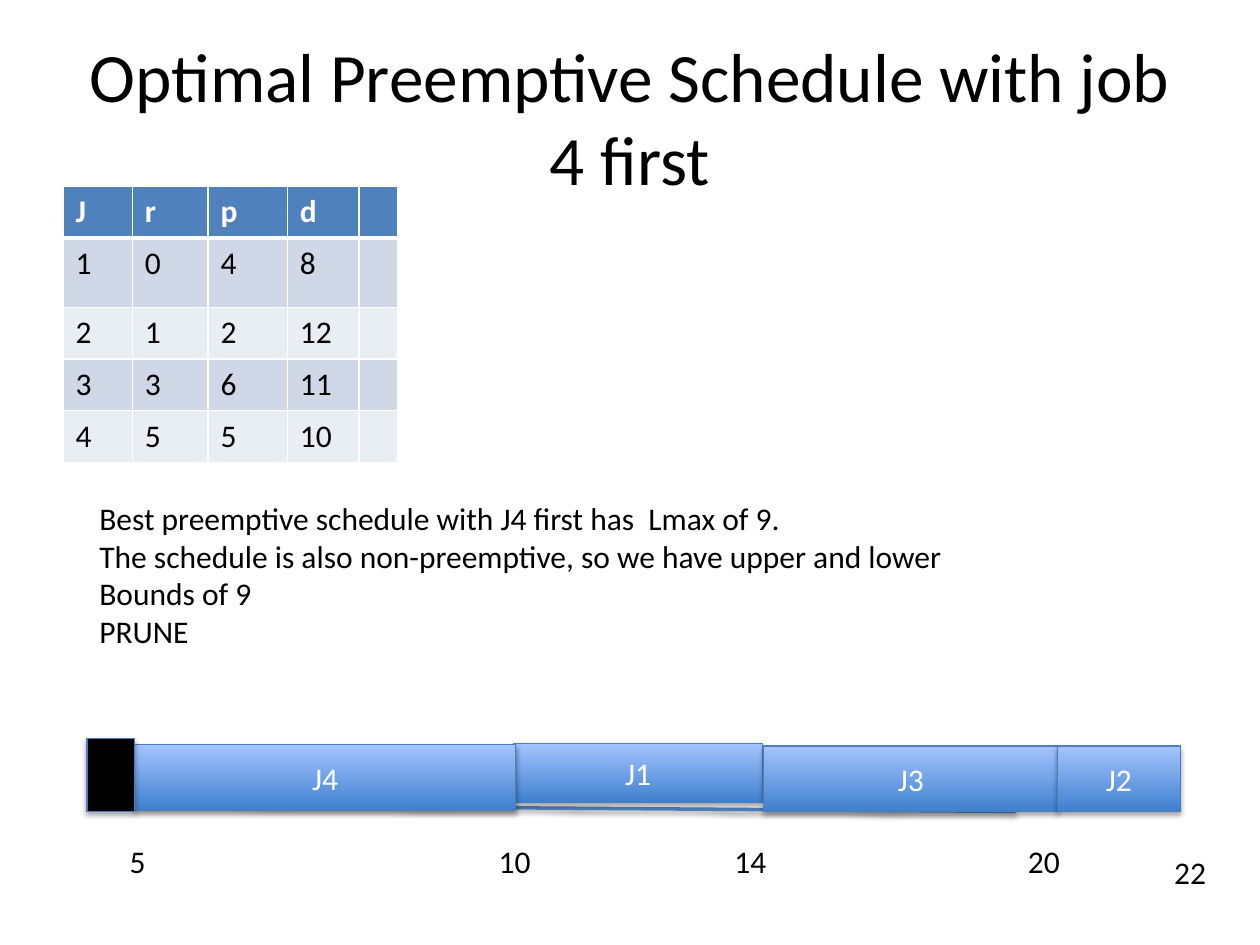
import pptx
import pptx.util
import pptx.dml.color
import pptx.enum.shapes
import pptx.enum.text
import pptx.oxml
import pptx.oxml.ns
from pptx.util import Inches

ALIGN = pptx.enum.text.PP_ALIGN
ANCHOR = pptx.enum.text.MSO_ANCHOR
RECTANGLE = pptx.enum.shapes.MSO_SHAPE.RECTANGLE
DRAWING_NS = pptx.oxml.ns.nsdecls("a")


def color(hex_string):
    return pptx.dml.color.RGBColor.from_string(hex_string)


def add_run(para, text, size=18, hex_string="000000", bold=False):
    span = para.add_run()
    span.text = text
    span.font.name = "Calibri"
    span.font.size = pptx.util.Pt(size)
    span.font.bold = bold
    span.font.color.rgb = color(hex_string)


deck = pptx.Presentation()
deck.slide_width, deck.slide_height = Inches(10), Inches(7.5)
page = deck.slides.add_slide(deck.slide_layouts[5])

# Title
title = page.shapes.title
title.left, title.top = Inches(0.5), Inches(0.3)
title.width, title.height = Inches(9), Inches(1.25)
title.text_frame.auto_size = pptx.enum.text.MSO_AUTO_SIZE.NONE
title.text_frame.vertical_anchor = ANCHOR.MIDDLE
para = title.text_frame.paragraphs[0]
para.alignment = ALIGN.CENTER
add_run(para, "Optimal Preemptive Schedule with job 4 first", 39.6)

# Job table
jobs = [
    ["J", "r", "p", "d", ""],
    ["1", "0", "4", "8", ""],
    ["2", "1", "2", "12", ""],
    ["3", "3", "6", "11", ""],
    ["4", "5", "5", "10", ""],
]
column_widths = [0.55, 0.6, 0.63, 0.57, 0.31]
row_heights = [0.41, 0.55, 0.41, 0.41, 0.41]
table = page.shapes.add_table(
    5, 5, Inches(0.5), Inches(1.48), Inches(sum(column_widths)), Inches(sum(row_heights))
).table
for column, width in zip(table.columns, column_widths):
    column.width = Inches(width)
for row, height in zip(table.rows, row_heights):
    row.height = Inches(height)
for r, values in enumerate(jobs):
    header = r == 0
    for c, value in enumerate(values):
        cell = table.cell(r, c)
        cell.fill.solid()
        cell.fill.fore_color.rgb = color("4F81BD" if header else ["E9EDF4", "D0D8E8"][r % 2])
        if value:
            add_run(cell.text_frame.paragraphs[0], value,
                    hex_string="FFFFFF" if header else "000000", bold=header)
        # White borders, thicker between header and body
        for i, side in enumerate("LRTB"):
            thick = (header and side == "B") or (r == 1 and side == "T")
            border = pptx.oxml.parse_xml(
                f'<a:ln{side} {DRAWING_NS} w="{pptx.util.Pt(3 if thick else 1)}">'
                '<a:solidFill><a:srgbClr val="FFFFFF"/></a:solidFill>'
                f'</a:ln{side}>')
            cell._tc.get_or_add_tcPr().insert(i, border)

# Time axis behind the bars
axis = page.shapes.add_connector(
    pptx.enum.shapes.MSO_CONNECTOR.STRAIGHT,
    Inches(1.06), Inches(6.39), Inches(8.06), Inches(6.44))
axis.line.color.rgb = color("4F81BD")
axis.line.width = pptx.util.Pt(2)
shadowed = [(axis, 1.6, 38)]

# Schedule bars: job, left, top, width, height (no job means idle time)
bars = [
    ("J1", 4.08, 5.9, 1.97, 0.47),
    ("J4", 1.07, 5.91, 3.02, 0.52),
    ("J3", 6.06, 5.92, 2.34, 0.52),
    ("J2", 8.39, 5.92, 0.98, 0.52),
    ("", 0.69, 5.86, 0.38, 0.58),
]
for job, *place in bars:
    bar = page.shapes.add_shape(RECTANGLE, *map(Inches, place))
    bar.line.color.rgb = color("4B7EBC")
    bar.line.width = pptx.util.Pt(0.75)
    if job:
        bar.fill.gradient()
        bar.fill.gradient_angle = 90
        for stop, shade in zip(bar.fill.gradient_stops, ["3F80CE", "A4C4FF"]):
            stop.color.rgb = color(shade)
        bar.text_frame.vertical_anchor = ANCHOR.MIDDLE
        para = bar.text_frame.paragraphs[0]
        para.alignment = ALIGN.CENTER
        add_run(para, job, hex_string="FFFFFF")
    else:
        bar.fill.solid()
        bar.fill.fore_color.rgb = color("000000")
    shadowed.append((bar, 1.8, 35))

# Soft shadows straight below the axis and bars
for item, distance, opacity in shadowed:
    item._element.spPr.append(pptx.oxml.parse_xml(
        f'<a:effectLst {DRAWING_NS}><a:outerShdw blurRad="{pptx.util.Pt(3.1)}" '
        f'dist="{pptx.util.Pt(distance)}" dir="5400000" rotWithShape="0">'
        f'<a:srgbClr val="000000"><a:alpha val="{opacity * 1000}"/></a:srgbClr>'
        '</a:outerShdw></a:effectLst>'))

# Conclusion and time labels: lines, left, top, width, height
conclusion = [
    "Best preemptive schedule with J4 first has  Lmax of 9.",
    "The schedule is also non-preemptive, so we have upper and lower",
    "Bounds of 9",
    "PRUNE",
]
notes = [
    (conclusion, 0.69, 3.91, 6.98, 1.62),
    (["5"], 0.93, 6.63, 0.33, 0.4),
    (["10"], 3.86, 6.63, 0.46, 0.4),
    (["14"], 5.73, 6.63, 0.46, 0.4),
    (["20"], 8.06, 6.63, 0.46, 0.4),
    (["22"], 9.22, 6.72, 0.46, 0.4),
]
for lines, *place in notes:
    box = page.shapes.add_textbox(*map(Inches, place))
    frame = box.text_frame
    frame.word_wrap = False
    frame.auto_size = pptx.enum.text.MSO_AUTO_SIZE.SHAPE_TO_FIT_TEXT
    for i, line in enumerate(lines):
        add_run(frame.add_paragraph() if i else frame.paragraphs[0], line)

deck.save("out.pptx")
